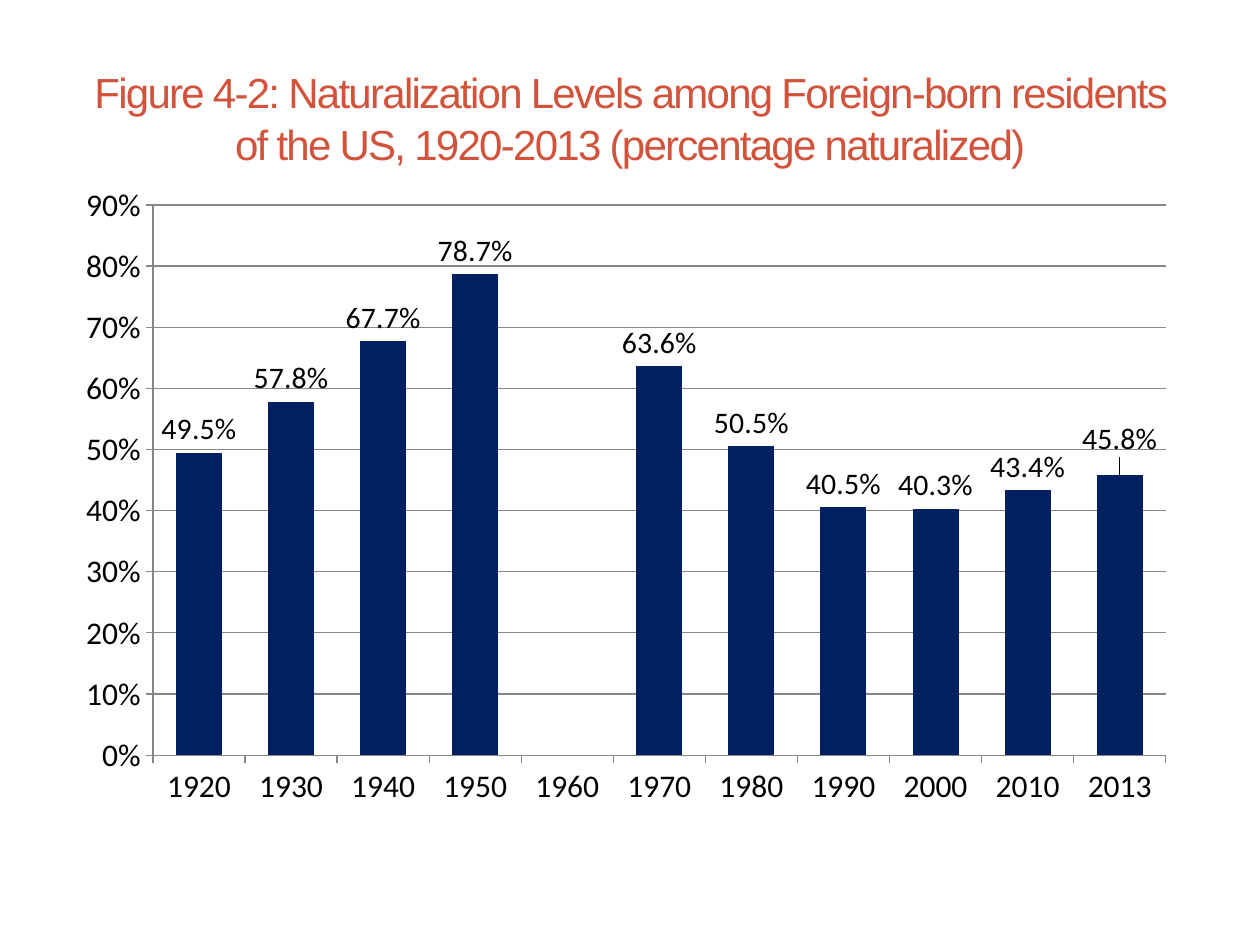
from lxml.etree import SubElement
from pptx import Presentation
from pptx.chart.data import CategoryChartData
from pptx.dml.color import RGBColor as RGB
from pptx.enum.chart import XL_CHART_TYPE as Kind, XL_LABEL_POSITION as Pos, XL_TICK_MARK as Tick
from pptx.enum.text import MSO_ANCHOR as Anchor, PP_ALIGN as Align
from pptx.oxml.ns import qn
from pptx.util import Pt

TITLE = ("Figure 4-2: Naturalization Levels among Foreign-born residents "
         "of the US, 1920-2013 (percentage naturalized)")
NATURALIZED = {
    "1920": 0.495, "1930": 0.578, "1940": 0.677, "1950": 0.787,
    "1960": None, "1970": 0.636, "1980": 0.505, "1990": 0.405,
    "2000": 0.403, "2010": 0.434, "2013": 0.458,
}
THEME = {
    "title": {"name": "Arial", "size": Pt(24), "color": "D2533C"},
    "axis": {"name": "Calibri", "size": Pt(18), "color": "000000"},
    "label": {"name": "Calibri", "size": Pt(17), "color": "000000"},
    "bar": "002060",
    "line": "868686",
}
TITLE_BOX = [Pt(v) for v in (36, 21.6, 648, 90)]
CHART_BOX = [Pt(v) for v in (36, 98.6, 643, 370)]
PLOT_AREA = {"layoutTarget": "inner", "xMode": "edge", "yMode": "edge",
             "x": 0.08, "y": 0.05, "w": 0.9, "h": 0.85}
LAST_LABEL_SHIFT = {"x": 0, "y": -0.02}


def set_font(font, style):
    """Apply a theme text style to a font."""
    for name in ("name", "size"):
        setattr(font, name, style[name])
    font.color.rgb = RGB.from_string(style["color"])


def set_line(fmt):
    """Give an axis or gridline the theme line."""
    fmt.line.color.rgb = RGB.from_string(THEME["line"])
    fmt.line.width = Pt(0.75)


def set_layout(parent, index, values):
    """Place a chart part by a manual layout."""
    for old in parent.findall(qn("c:layout")):
        parent.remove(old)
    layout = SubElement(parent, qn("c:layout"))
    manual = SubElement(layout, qn("c:manualLayout"))
    for tag, value in values.items():
        SubElement(manual, qn("c:" + tag)).set("val", str(value))
    parent.insert(index, layout)


def add_title(s):
    """Add the figure title."""
    tf = s.shapes.add_textbox(*TITLE_BOX).text_frame
    for name, value in {"word_wrap": True, "vertical_anchor": Anchor.MIDDLE}.items():
        setattr(tf, name, value)
    p = tf.paragraphs[0]
    p.alignment, p.line_spacing = Align.CENTER, 1.04
    r = p.add_run()
    r.text = TITLE
    set_font(r.font, THEME["title"])
    r.font._element.set("spc", "-100")


def add_bars(s):
    """Add the column chart of naturalization levels."""
    data = CategoryChartData(number_format="0.0%")
    data.categories = list(NATURALIZED)
    data.add_series("Series 1", list(NATURALIZED.values()))
    chart = s.shapes.add_chart(Kind.COLUMN_CLUSTERED, *CHART_BOX, data).chart
    chart.has_legend = chart.has_title = False
    set_font(chart.font, THEME["axis"])
    set_layout(chart.plots[0]._element.getparent(), 0, PLOT_AREA)

    for axis in (chart.category_axis, chart.value_axis):
        axis.major_tick_mark, axis.minor_tick_mark = Tick.OUTSIDE, Tick.NONE
        set_font(axis.tick_labels.font, THEME["axis"])
        set_line(axis.format)
    axis = chart.value_axis
    for name, value in {"minimum_scale": 0, "maximum_scale": 0.9, "major_unit": 0.1}.items():
        setattr(axis, name, value)
    axis.tick_labels.number_format = "0%"
    axis.tick_labels.number_format_is_linked = False
    set_line(axis.major_gridlines.format)

    plot = chart.plots[0]
    plot.gap_width, plot.vary_by_categories = 100, False
    series = plot.series[0]
    series.format.fill.solid()
    series.format.fill.fore_color.rgb = RGB.from_string(THEME["bar"])
    labels = series.data_labels
    for name, value in {"show_value": True, "number_format": "0.0%",
                        "number_format_is_linked": False, "position": Pos.OUTSIDE_END}.items():
        setattr(labels, name, value)
    set_font(labels.font, THEME["label"])

    last = series.points[len(NATURALIZED) - 1].data_label
    set_font(last.font, THEME["label"])
    last.position = Pos.OUTSIDE_END
    set_layout(labels._element.find(qn("c:dLbl")), 1, LAST_LABEL_SHIFT)


def main():
    """Build and save the slide."""
    prs = Presentation()
    prs.slide_width, prs.slide_height = Pt(720), Pt(540)
    s = prs.slides.add_slide(prs.slide_layouts[6])
    add_title(s)
    add_bars(s)
    prs.save("out.pptx")


if __name__ == "__main__":
    main()
